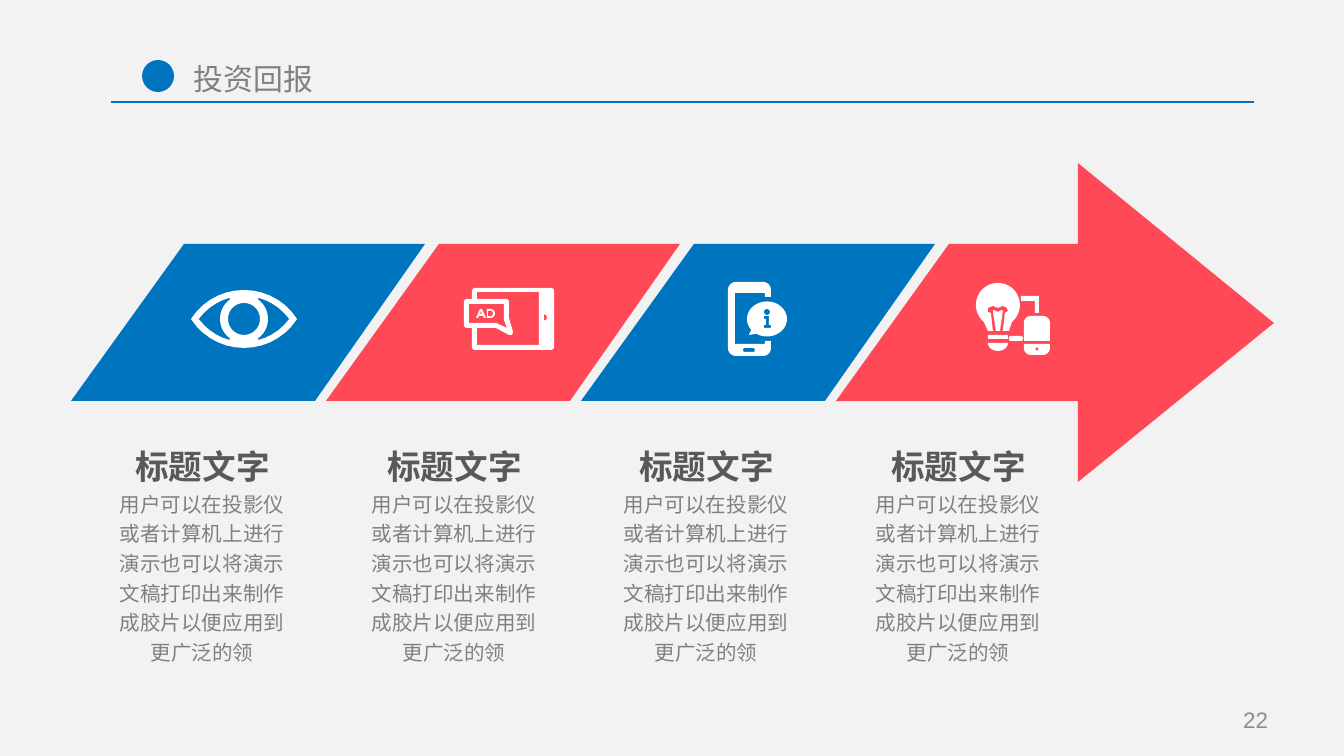
import math

import pptx
import pptx.dml.color
import pptx.enum.shapes
import pptx.enum.text
import pptx.oxml.ns
import pptx.util
from lxml import etree

EMU_PER_PX = 914400 / 134.4
COLORS = {
    "background": "F2F2F2", "blue": "0075BF", "rule": "0072BB", "red": "FF4957",
    "white": "FFFFFF", "title": "595959", "body": "808080", "number": "8C8C8C",
}
LATIN, CHINESE = "Arial", "Noto Sans CJK SC"
ALIGN = pptx.enum.text.PP_ALIGN
ANCHOR = pptx.enum.text.MSO_ANCHOR


def px(length):
    return pptx.util.Emu(round(length * EMU_PER_PX))


def color(name):
    return pptx.dml.color.RGBColor.from_string(COLORS[name])


# Outlines: each returns a list of points in px
def arc(x, y, rx, ry, start=0, end=360):
    """Points round a centre, in degrees clockwise from the right."""
    steps = max(4, round(abs(end - start) / 8))
    angles = [math.radians(start + (end - start) * i / steps) for i in range(steps + 1)]
    return [(x + rx * math.cos(a), y + ry * math.sin(a)) for a in angles]


def rounded(left, top, width, height, upper, lower):
    """Rectangle with one radius for the upper and one for the lower corners."""
    right, bottom = left + width, top + height
    return (arc(left + upper, top + upper, upper, upper, 180, 270)
            + arc(right - upper, top + upper, upper, upper, 270, 360)
            + arc(right - lower, bottom - lower, lower, lower, 0, 90)
            + arc(left + lower, bottom - lower, lower, lower, 90, 180))


class Deck:
    def __init__(self):
        self.presentation = pptx.Presentation()
        self.presentation.slide_width = px(1344)
        self.presentation.slide_height = px(756)
        self.slide = self.presentation.slides.add_slide(self.presentation.slide_layouts[6])
        background = self.slide.background.fill
        background.solid()
        background.fore_color.rgb = color("background")

    def paint(self, shape, fill):
        shape.shadow.inherit = False
        shape.fill.solid()
        shape.fill.fore_color.rgb = color(fill)
        shape.line.fill.background()

    def ellipse(self, left, top, width, height, fill):
        kind = pptx.enum.shapes.MSO_SHAPE.OVAL
        shape = self.slide.shapes.add_shape(kind, px(left), px(top), px(width), px(height))
        self.paint(shape, fill)

    def outline(self, contours, fill):
        """One freeform; a contour inside another one cuts a hole."""
        contours = [[(px(x), px(y)) for x, y in contour] for contour in contours]
        builder = self.slide.shapes.build_freeform(*contours[0][0], scale=1.0)
        builder.add_line_segments(contours[0][1:])
        for contour in contours[1:]:
            builder.move_to(*contour[0])
            builder.add_line_segments(contour[1:])
        self.paint(builder.convert_to_shape(), fill)

    def line(self, x1, y1, x2, y2, stroke, width):
        kind = pptx.enum.shapes.MSO_CONNECTOR.STRAIGHT
        connector = self.slide.shapes.add_connector(kind, px(x1), px(y1), px(x2), px(y2))
        connector.line.color.rgb = color(stroke)
        connector.line.width = pptx.util.Pt(width)
        properties = connector._element.spPr
        etree.SubElement(properties, pptx.oxml.ns.qn("a:effectLst"))

    def text(self, left, top, width, height, words, size, fill, font=LATIN, bold=False,
             align=ALIGN.LEFT, anchor=ANCHOR.TOP, spacing=None, inset=(13, 7)):
        box = self.slide.shapes.add_textbox(px(left), px(top), px(width), px(height))
        frame = box.text_frame
        frame.word_wrap = True
        frame.vertical_anchor = anchor
        frame.margin_left = frame.margin_right = px(inset[0])
        frame.margin_top = frame.margin_bottom = px(inset[1])
        paragraph = frame.paragraphs[0]
        paragraph.alignment = align
        paragraph.line_spacing = spacing
        run = paragraph.add_run()
        run.text = words
        run.font.size = pptx.util.Pt(size)
        run.font.bold = bold
        run.font.name = font
        run.font.color.rgb = color(fill)
        east_asian = etree.SubElement(run._r.get_or_add_rPr(), pptx.oxml.ns.qn("a:ea"))
        east_asian.set("typeface", CHINESE)


def eye_icon():
    lens = arc(244, 353, 63, 63, 213, 327) + arc(244, 285, 63, 63, 33, 147)
    left_white = (arc(244, 352, 56, 56, 216.5, 255.5) + arc(244, 319, 24, 24, 234, 126)
                  + arc(244, 286, 56, 56, 104.5, 143.5))
    right_white = [(488 - x, y) for x, y in left_white]
    return [lens, left_white, right_white, arc(244, 319, 16, 16)]


def tablet_icon():
    body = (arc(475, 291, 3, 3, 180, 270) + arc(551, 291, 3, 3, 270, 360)
            + arc(551, 347, 3, 3, 0, 90) + arc(475, 347, 3, 3, 90, 180)
            + [(472, 328)] + arc(467, 325, 3, 3, 90, 180) + arc(467, 302, 3, 3, 180, 270)
            + [(472, 299)])
    screen = [(477, 292), (477, 299), (507, 299), (509, 301), (509, 318), (513, 332),
              (512, 335), (509, 335), (496, 328), (477, 328), (477, 345), (539, 345), (539, 292)]
    bubble = [(469, 304), (469, 323), (496, 323), (507, 328), (504, 320), (504, 304)]
    letter_a = [(480, 309), (482, 309), (486, 318), (484, 318), (483, 316), (479, 316),
                (478, 318), (476, 318)]
    letter_d = [(487, 309)] + arc(490, 313.5, 5, 4.5, -90, 90) + [(487, 318)]
    return [body, screen, bubble, letter_a, [(480, 314), (481, 311), (482, 314)],
            letter_d, [(488, 311)] + arc(490, 313.5, 3, 3, -90, 90) + [(488, 316)],
            arc(544, 317.5, 3, 3, -90, 90)]


def phone_icon():
    case = (arc(736, 290, 8, 8, 180, 270) + arc(763, 290, 8, 8, 270, 360)
            + [(771, 297), (765, 297), (765, 293), (735, 293), (735, 344), (765, 344),
               (765, 341), (771, 341)]
            + arc(763, 348, 8, 8, 0, 90) + arc(736, 348, 8, 8, 90, 180))
    bubble = arc(767, 319, 20, 17.5, -218, 122) + [(749, 335)]
    stem = [(764, 316), (769, 316), (769, 325), (771, 325), (771, 328), (764, 328),
            (764, 325), (766, 325), (766, 319), (764, 319)]
    return [case, rounded(743, 348, 12, 4, 2, 2), bubble, arc(767, 312, 3, 3), stem]


def bulb_icon():
    glass = arc(998, 305, 22, 22, 130, 410) + [(1009, 331), (988, 331)]
    filament = [(1003, 331), (1005, 313), (1008, 311), (1007, 308), (1003, 306), (998, 308),
                (993, 306), (988, 308), (988, 312), (991, 313), (993, 331)]
    core = [(994, 310), (998, 312), (1002, 310), (1003, 311), (1000, 331), (996, 331), (993, 311)]
    cable = [(1021, 296), (1039, 296), (1039, 313), (1035, 313), (1035, 301), (1021, 301)]
    return [glass, filament, core, rounded(988, 335, 20, 4, 1, 1),
            arc(998, 343, 10, 8, 0, 180), cable, rounded(1009, 336, 14, 5, 2, 2),
            rounded(1024, 316, 26, 25, 7, 1), rounded(1024, 344, 26, 11, 1, 7),
            arc(1037, 349, 1.5, 1.5)]


def main():
    deck = Deck()

    # Header
    deck.text(185, 56, 263, 46, "投资回报", 16, "body", font=CHINESE, inset=(9, 5))
    deck.line(111, 102, 1254, 102, "rule", 0.75)
    deck.ellipse(142, 60, 32, 32, "blue")

    # Slide number
    deck.text(964, 700, 313, 40, "22", 12, "number", align=ALIGN.RIGHT,
              anchor=ANCHOR.MIDDLE, inset=(9, 5))

    # Slanted steps, ending in the arrow
    for step, fill in enumerate(("blue", "red", "blue")):
        slant = [(71, 401), (184, 244), (425, 244), (315, 401)]
        deck.outline([[(x + 255 * step, y) for x, y in slant]], fill)
    deck.outline([[(1078, 163), (1274, 323), (1078, 482), (1078, 401),
                   (836, 401), (949, 244), (1078, 244)]], "red")

    # Icons
    for icon in (eye_icon, tablet_icon, phone_icon, bulb_icon):
        deck.outline(icon(), "white")

    # Captions
    description = "用户可以在投影仪或者计算机上进行演示也可以将演示文稿打印出来制作成胶片以便应用到更广泛的领"
    for column in range(4):
        shift = 252 * column
        deck.text(98 + shift, 480, 208, 192, description, 11, "body",
                  align=ALIGN.CENTER, spacing=1.2)
        deck.text(79 + shift, 431, 247, 58, "标题文字", 18, "title", bold=True,
                  align=ALIGN.CENTER, spacing=1.2)

    deck.presentation.save("out.pptx")


if __name__ == "__main__":
    main()
